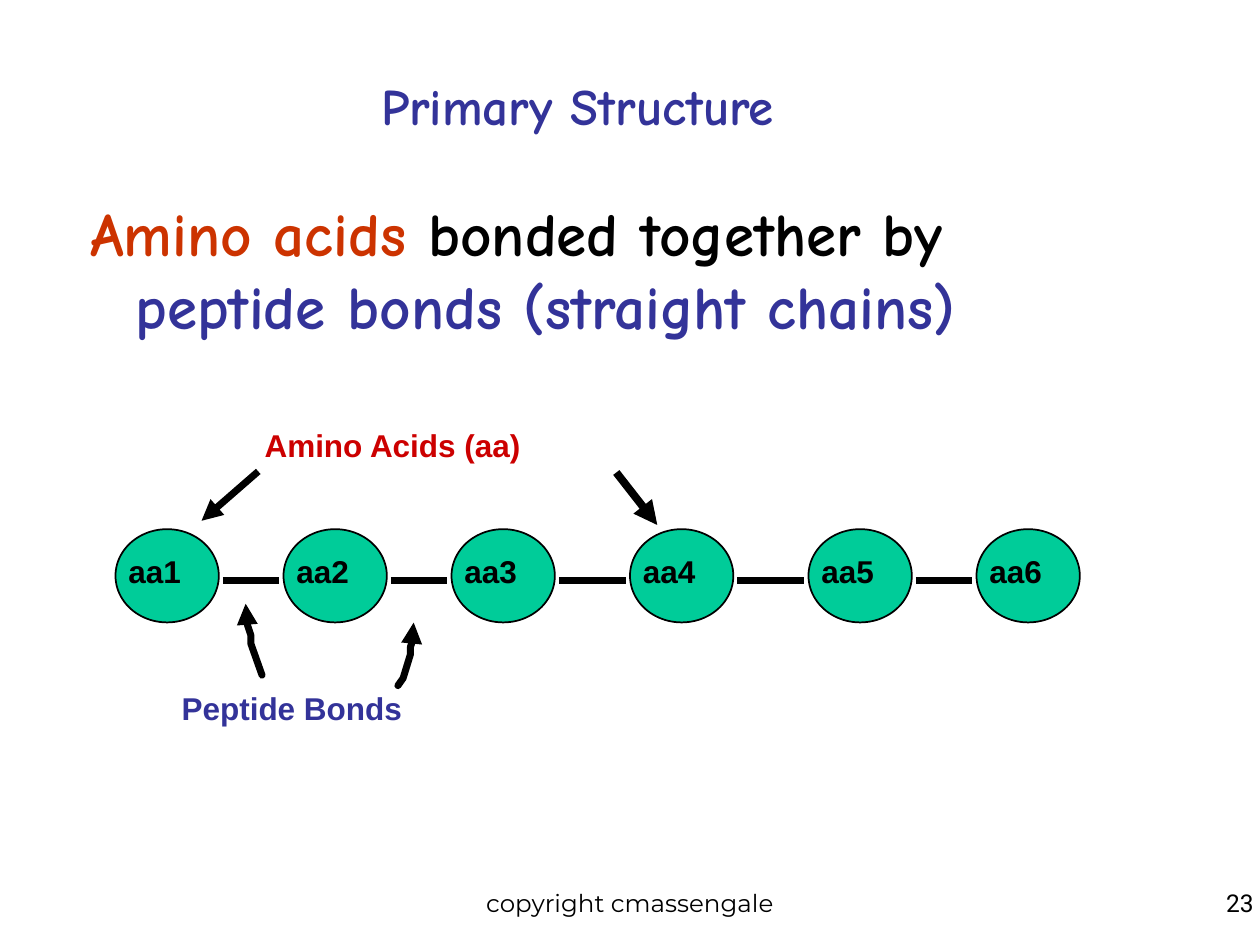
from dataclasses import dataclass
from typing import Any

from pptx import Presentation
from pptx.dml.color import RGBColor
from pptx.enum.dml import MSO_THEME_COLOR
from pptx.enum.shapes import MSO_CONNECTOR, MSO_SHAPE
from pptx.enum.text import MSO_ANCHOR, PP_ALIGN
from pptx.oxml.ns import qn
from pptx.util import Inches, Pt
from lxml import etree

BLACK = RGBColor(0x00, 0x00, 0x00)
BLUE = RGBColor(0x33, 0x33, 0x99)
ORANGE = RGBColor(0xCC, 0x33, 0x00)
RED = RGBColor(0xCC, 0x00, 0x00)
GREEN = RGBColor(0x00, 0xCC, 0x99)

LEFT, CENTER, RIGHT = PP_ALIGN.LEFT, PP_ALIGN.CENTER, PP_ALIGN.RIGHT
TOP, MIDDLE = MSO_ANCHOR.TOP, MSO_ANCHOR.MIDDLE
STRAIGHT, OVAL = MSO_CONNECTOR.STRAIGHT, MSO_SHAPE.OVAL

SLIDE_WIDTH, SLIDE_HEIGHT = 10, 7.5
COLUMNS = 120
UNIT = SLIDE_WIDTH / COLUMNS
INSET = Inches(0.05)

CIRCLE_COLUMNS = (11, 27, 43, 60, 77, 93)
CIRCLE_ROW, CIRCLE_WIDTH, CIRCLE_HEIGHT = 50.4, 9.84, 8.88
BOND_ROW, BOND_GAP = 55.3, 0.4


@dataclass(frozen=True)
class Box:
    column: float
    row: float
    width: float
    height: float


@dataclass(frozen=True)
class Arrow:
    points: tuple[tuple[float, float], ...]
    weight: float = 4


ARROWS = (
    Arrow(((24.6, 44.9), (19.2, 49.6))),
    Arrow(((58.7, 45), (62.6, 50)), 4.5),
    Arrow(((24.96, 64.3), (23.9, 61.3), (23.9, 60.5), (23.4, 59), (23.4, 57.5))),
    Arrow(((37.9, 65.3), (38.4, 64.6), (39.1, 62.3), (39.1, 61.6), (39.4, 60.7), (39.4, 59.3))),
)


def grid(units: float) -> int:
    return Inches(units * UNIT)


def place(box: Box) -> tuple[int, ...]:
    return tuple(grid(value) for value in (box.column, box.row, box.width, box.height))


def add_text(slide: Any, box: Box, *runs: tuple[str, RGBColor], font: str = "Arial",
             size: float = 18, bold: bool = True, align: Any = LEFT, anchor: Any = TOP,
             wrap: bool = False, hanging: float = 0) -> None:
    shape = slide.shapes.add_textbox(*place(box))
    frame = shape.text_frame
    frame.word_wrap = wrap
    frame.vertical_anchor = anchor
    frame.margin_left = frame.margin_right = INSET
    frame.margin_top = frame.margin_bottom = INSET
    paragraph = frame.paragraphs[0]
    paragraph.alignment = align
    if hanging:
        properties = paragraph._p.get_or_add_pPr()
        properties.set("marL", str(Inches(hanging)))
        properties.set("indent", str(-Inches(hanging)))
    for text, color in runs:
        run = paragraph.add_run()
        run.text = text
        run.font.name = font
        run.font.size = Pt(size)
        run.font.bold = bold
        run.font.color.rgb = color


def add_line(slide: Any, start: tuple[float, float], end: tuple[float, float],
             weight: float = 4) -> Any:
    line = slide.shapes.add_connector(
        STRAIGHT, *(grid(value) for value in (*start, *end)))
    line.line.color.rgb = BLACK
    line.line.width = Pt(weight)
    etree.SubElement(line._element.spPr, qn("a:effectLst"))
    return line


def add_curve(slide: Any, arrow: Arrow) -> Any:
    points = [(grid(column), grid(row)) for column, row in arrow.points]
    builder = slide.shapes.build_freeform(*points[0])
    builder.add_line_segments(points[1:], close=False)
    shape = builder.convert_to_shape()
    shape.shadow.inherit = False
    shape.fill.background()
    shape.line.color.rgb = BLACK
    shape.line.width = Pt(arrow.weight)
    outline = shape.line._get_or_add_ln()
    outline.set("cap", "rnd")
    etree.SubElement(outline, qn("a:round"))
    return shape


def add_arrow(slide: Any, arrow: Arrow) -> None:
    if len(arrow.points) == 2:
        shape = add_line(slide, *arrow.points, weight=arrow.weight)
    else:
        shape = add_curve(slide, arrow)
    etree.SubElement(shape.line._get_or_add_ln(), qn("a:tailEnd"), type="triangle")


def add_amino_acid(slide: Any, column: float, label: str) -> None:
    circle = slide.shapes.add_shape(
        OVAL, *place(Box(column, CIRCLE_ROW, CIRCLE_WIDTH, CIRCLE_HEIGHT)))
    circle.shadow.inherit = False
    circle.fill.solid()
    circle.fill.fore_color.rgb = GREEN
    circle.line.color.rgb = BLACK
    circle.line.width = Pt(1)
    add_text(slide, Box(column + 0.62, 52, 6.4, 4.5), (label, BLACK))


def main() -> None:
    presentation = Presentation()
    presentation.slide_width = Inches(SLIDE_WIDTH)
    presentation.slide_height = Inches(SLIDE_HEIGHT)
    slide = presentation.slides.add_slide(presentation.slide_layouts[6])

    add_text(slide, Box(8, 6, 94, 8), ("Primary Structure", BLUE), font="Comic Neue",
             size=29.2, align=CENTER, anchor=MIDDLE, wrap=True)
    add_text(slide, Box(8, 18, 94, 24), ("Amino acids ", ORANGE),
             ("bonded together by ", BLACK), ("peptide bonds (straight chains)", BLUE),
             font="Comic Neue", size=34.9, wrap=True, hanging=0.36)

    for number, column in enumerate(CIRCLE_COLUMNS, start=1):
        add_amino_acid(slide, column, f"aa{number}")
    for column, following in zip(CIRCLE_COLUMNS, CIRCLE_COLUMNS[1:]):
        add_line(slide, (column + CIRCLE_WIDTH + BOND_GAP, BOND_ROW),
                 (following - BOND_GAP, BOND_ROW))

    add_text(slide, Box(24.6, 40, 25.7, 4.5), ("Amino Acids (aa)", RED))
    add_text(slide, Box(16.7, 65, 22.3, 4.5), ("Peptide Bonds", BLUE))
    for arrow in ARROWS:
        add_arrow(slide, arrow)

    add_text(slide, Box(41, 84, 38, 4.3), ("copyright cmassengale", BLACK),
             font="Montserrat", size=14, bold=False, align=CENTER, wrap=True)
    add_text(slide, Box(115.6, 84, 4.4, 4.3), ("23", BLACK),
             font="Roboto", size=14, bold=False, align=RIGHT)
    presentation.save("out.pptx")


if __name__ == "__main__":
    main()
